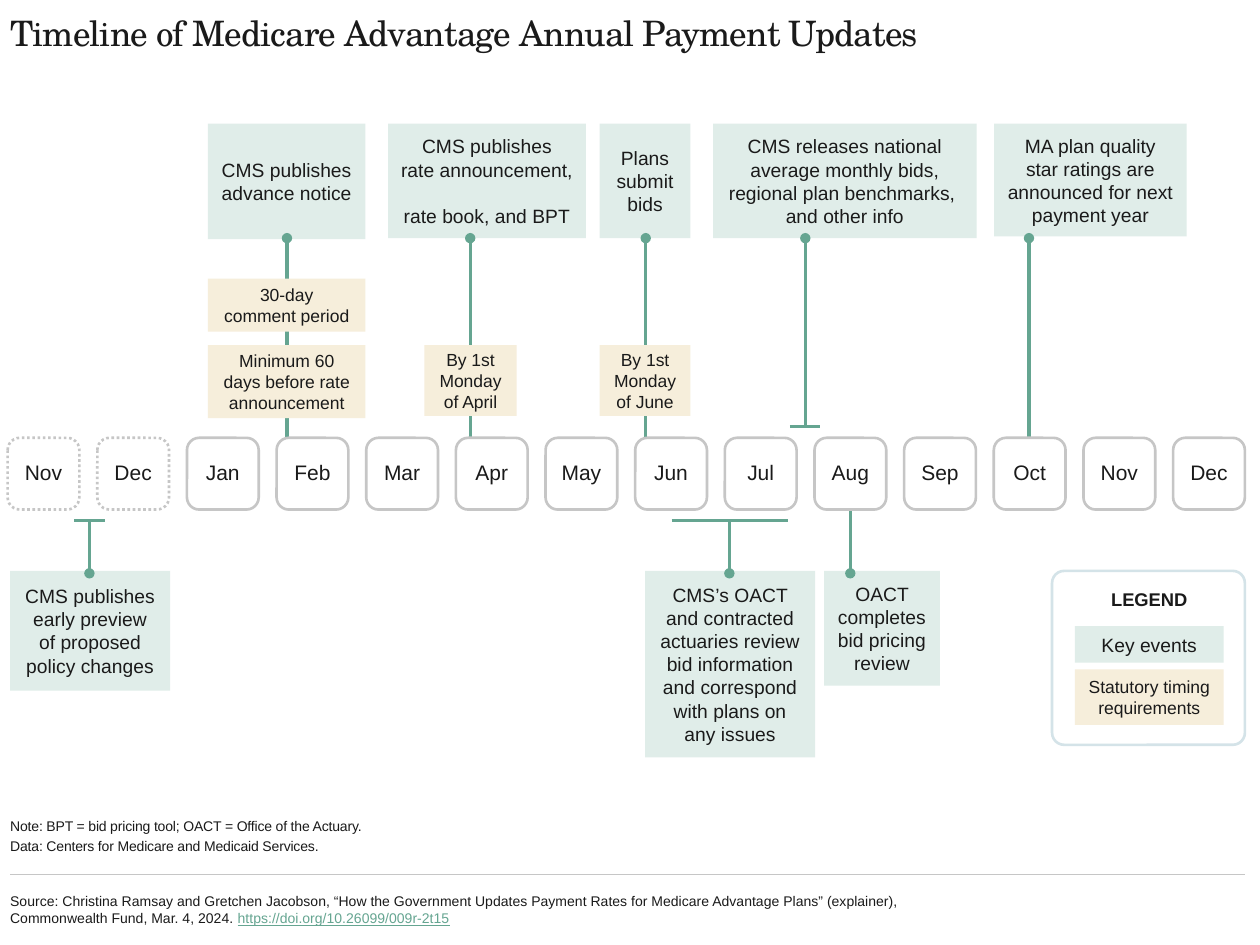
from lxml.etree import SubElement
from pptx import Presentation
from pptx.dml.color import RGBColor
from pptx.enum.dml import MSO_LINE
from pptx.enum.shapes import MSO_CONNECTOR, MSO_SHAPE
from pptx.enum.text import MSO_ANCHOR, PP_ALIGN
from pptx.oxml.ns import qn
from pptx.util import Pt

INK = RGBColor(0x1A, 0x1A, 0x1A)
GREEN = RGBColor(0x65, 0xA5, 0x91)
MINT = RGBColor(0xE0, 0xED, 0xE9)
CREAM = RGBColor(0xF6, 0xEE, 0xDB)
GRAY = RGBColor(0xC6, 0xC6, 0xC6)
PALE_BLUE = RGBColor(0xD4, 0xE3, 0xE8)
WHITE = RGBColor(0xFF, 0xFF, 0xFF)

LEFT, RIGHT = 5.8, 711.4
EVENT_TOP, EVENT_BOTTOM = 70.6, 136.1
LOWER_TOP, DOT_BELOW = 326.2, 327.6
MONTH_LEFT, MONTH_TOP, MONTH_SIZE, MONTH_STEP = 4.4, 250.2, 41, 51.23
MONTHS = "Nov Dec Jan Feb Mar Apr May Jun Jul Aug Sep Oct Nov Dec".split()
PRIOR_YEAR_MONTHS = 2

EVENTS = [
    (118.8, EVENT_TOP, 90, 66, "CMS publishes advance notice"),
    (221.8, EVENT_TOP, 113, 65.5, "CMS publishes\nrate announcement, \vrate book, and BPT"),
    (342.7, EVENT_TOP, 51.8, 65.5, "Plans submit bids"),
    (407.5, EVENT_TOP, 150.5, 65.5,
     "CMS releases national average monthly bids, regional plan benchmarks, \vand other info"),
    (568.1, EVENT_TOP, 110, 64.5,
     "MA plan quality star ratings are announced for next payment year"),
    (LEFT, LOWER_TOP, 91.4, 68.4, "CMS publishes early preview of proposed policy changes"),
    (368.6, LOWER_TOP, 97.2, 106.6,
     "CMS’s OACT and contracted actuaries review bid information "
     "and correspond with plans on any issues"),
    (470.9, LOWER_TOP, 66.2, 65.5, "OACT completes bid pricing review"),
]
TIMINGS = [
    (118.8, 159.2, 90, 30.4, "30-day\ncomment period"),
    (118.8, 197.3, 90, 41.6, "Minimum 60 days before rate announcement"),
    (242.6, 197.3, 52.6, 40.3, "By 1st Monday of April"),
    (342.7, 197.3, 51.8, 40.3, "By 1st Monday of June"),
]
STEMS = [
    (164, EVENT_BOTTOM, 260.6, 1.75),
    (268.7, EVENT_BOTTOM, 260.6, 1.75),
    (369, EVENT_BOTTOM, 260.6, 1.75),
    (588, EVENT_BOTTOM, 260.6, 1.75),
    (460.2, EVENT_BOTTOM, 243.6, 1.5),
    (51.1, DOT_BELOW, 297.6, 1.5),
    (416.8, DOT_BELOW, 297.6, 1.5),
    (485.9, DOT_BELOW, 286.6, 1.5),
]
CAPS = [(42.5, 59.8, 297.6), (383.8, 450, 297.6), (451.4, 468.7, 243.8)]


def add_line(slide, x1, y1, x2, y2, color, width, dot=False):
    """Draw a straight line, with an optional dot at its start."""
    ln = slide.shapes.add_connector(MSO_CONNECTOR.STRAIGHT, Pt(x1), Pt(y1), Pt(x2), Pt(y2))
    ln.line.color.rgb = color
    ln.line.width = Pt(width)
    SubElement(ln._element.spPr, qn("a:effectLst"))
    if dot:
        SubElement(ln.line._get_or_add_ln(), qn("a:headEnd"), type="oval")


def write(tf, text, size, align=PP_ALIGN.LEFT, font="Arial", bold=None, spacing=0, before=0):
    """Fill a text frame, one paragraph for each line of text."""
    tf.word_wrap = True
    for i, line in enumerate(text.split("\n")):
        p = tf.add_paragraph() if i else tf.paragraphs[0]
        p.text = line
        p.alignment = align
        if i and before:
            p.space_before = Pt(before)
        p.font.name, p.font.size, p.font.bold = font, Pt(size), bold
        p.font.color.rgb = INK
        for r in p.runs:
            r.font.color.rgb = INK
            if spacing:
                r._r.get_or_add_rPr().set("spc", str(spacing))


def clear_margins(tf):
    """Set all four insets of a text frame to zero."""
    tf.margin_left = tf.margin_right = tf.margin_top = tf.margin_bottom = 0


def add_text(slide, x, y, w, h, text, size, anchor=MSO_ANCHOR.TOP, **style):
    """Add a plain text box without insets and return its text frame."""
    tf = slide.shapes.add_textbox(Pt(x), Pt(y), Pt(w), Pt(h)).text_frame
    clear_margins(tf)
    tf.vertical_anchor = anchor
    write(tf, text, size, **style)
    return tf


def add_box(slide, x, y, w, h, fill=None, line=None, corner=0, text="", size=11, bold=None,
            anchor=MSO_ANCHOR.MIDDLE):
    """Add a box with centred text and return it."""
    sp = slide.shapes.add_shape(MSO_SHAPE.ROUNDED_RECTANGLE, Pt(x), Pt(y), Pt(w), Pt(h))
    sp.shadow.inherit = False
    sp.adjustments[0] = corner
    if fill is None:
        sp.fill.background()
    else:
        sp.fill.solid()
        sp.fill.fore_color.rgb = fill
    if line is None:
        sp.line.fill.background()
    else:
        sp.line.color.rgb = line
        sp.line.width = Pt(1.5)
    if text:
        sp.text_frame.vertical_anchor = anchor
        write(sp.text_frame, text, size, PP_ALIGN.CENTER, bold=bold)
    return sp


def add_months(slide):
    """Add the row of months, dotted for the prior year."""
    for i, month in enumerate(MONTHS):
        sp = add_box(slide, MONTH_LEFT + i * MONTH_STEP, MONTH_TOP, MONTH_SIZE, MONTH_SIZE,
                     WHITE, GRAY, 0.17, month, 12)
        clear_margins(sp.text_frame)
        sp.text_frame.paragraphs[0].line_spacing = 0.9
        if i < PRIOR_YEAR_MONTHS:
            sp.line.dash_style = MSO_LINE.ROUND_DOT


def add_legend(slide):
    """Add the framed legend."""
    x, w = 614.2, 85
    add_box(slide, 601.2, LOWER_TOP, 110.2, 99.4, line=PALE_BLUE, corner=0.07)
    add_box(slide, x, 332.6, w, 23, text="LEGEND", size=10.5, bold=True, anchor=MSO_ANCHOR.TOP)
    add_box(slide, x, 357.8, w, 20.9, MINT, text="Key events")
    add_box(slide, x, 382.5, w, 31.7, CREAM, text="Statutory timing requirements", size=10)


def add_footer(slide):
    """Add the notes, the rule and the source."""
    add_text(slide, LEFT, 452.2, 705.6, 36,
             "Note: BPT = bid pricing tool; OACT = Office of the Actuary.\n"
             "Data: Centers for Medicare and Medicaid Services.",
             8, MSO_ANCHOR.BOTTOM, spacing=-10, before=1.6)
    add_line(slide, LEFT, 499.7, RIGHT, 499.7, GRAY, 0.75)
    tf = add_text(slide, LEFT, 503.3, 561.6, 33.1,
                  "Source: Christina Ramsay and Gretchen Jacobson, “How the Government Updates "
                  "Payment Rates for Medicare Advantage Plans” (explainer), "
                  "Commonwealth Fund, Mar. 4, 2024. ", 8, MSO_ANCHOR.MIDDLE)
    r = tf.paragraphs[0].add_run()
    r.text = "https://doi.org/10.26099/009r-2t15"
    r.font.color.rgb = GREEN
    r.font.underline = True


def main():
    """Build the timeline slide and save it."""
    prs = Presentation()
    prs.slide_width, prs.slide_height = Pt(720), Pt(540)
    slide = prs.slides.add_slide(prs.slide_layouts[6])
    add_text(slide, LEFT, 6.5, 705.6, 49, "Timeline of Medicare Advantage Annual Payment Updates",
             20, font="TeX Gyre Schola", spacing=-50)
    for x, y, w, h, text in EVENTS:
        add_box(slide, x, y, w, h, MINT, text=text)
    for x, dot_y, end_y, width in STEMS:
        add_line(slide, x, dot_y, x, end_y, GREEN, width, dot=True)
    for x1, x2, y in CAPS:
        add_line(slide, x1, y, x2, y, GREEN, 1.5)
    for x, y, w, h, text in TIMINGS:
        add_box(slide, x, y, w, h, CREAM, text=text, size=10)
    add_months(slide)
    add_legend(slide)
    add_footer(slide)
    prs.save("out.pptx")


if __name__ == "__main__":
    main()
